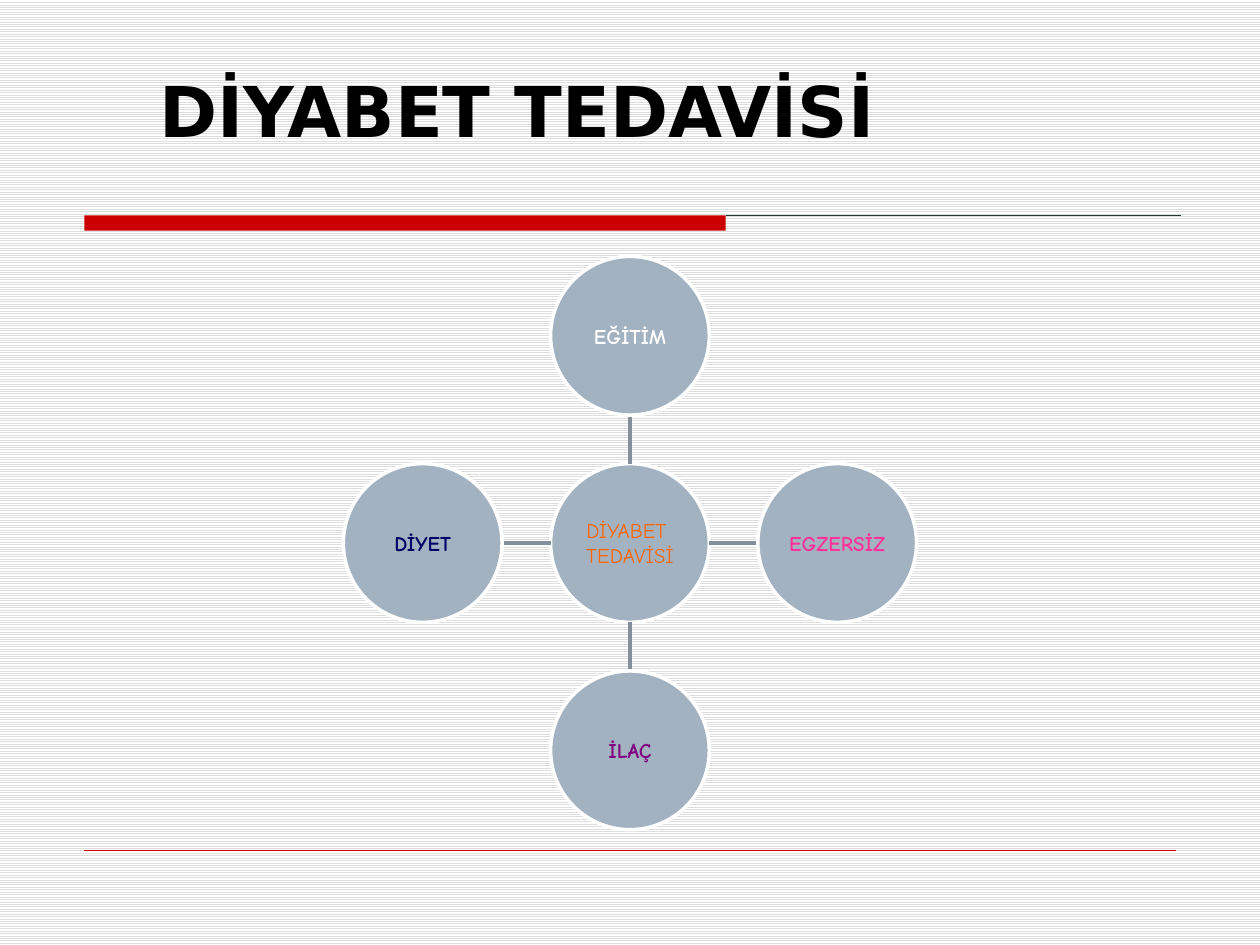
from lxml import etree
from pptx import Presentation
from pptx.dml.color import RGBColor
from pptx.enum.dml import MSO_PATTERN
from pptx.enum.shapes import MSO_CONNECTOR, MSO_SHAPE
from pptx.enum.text import MSO_ANCHOR, PP_ALIGN
from pptx.oxml.ns import qn
from pptx.util import Inches, Pt

STRAIGHT = MSO_CONNECTOR.STRAIGHT
OVAL, RECTANGLE = MSO_SHAPE.OVAL, MSO_SHAPE.RECTANGLE
MIDDLE, BOTTOM = MSO_ANCHOR.MIDDLE, MSO_ANCHOR.BOTTOM
CENTER, LEFT = PP_ALIGN.CENTER, PP_ALIGN.LEFT

BLACK = RGBColor(0x00, 0x00, 0x00)
WHITE = RGBColor(0xFF, 0xFF, 0xFF)
STRIPE = RGBColor(0xDD, 0xDD, 0xDD)
RED = RGBColor(0xCC, 0x00, 0x00)
DARK = RGBColor(0x26, 0x33, 0x33)
CIRCLE = RGBColor(0xA3, 0xB2, 0xC1)
SPOKE = RGBColor(0x83, 0x8F, 0x9B)
ORANGE = RGBColor(0xFF, 0x66, 0x00)
PINK = RGBColor(0xFF, 0x33, 0x99)
PURPLE = RGBColor(0x80, 0x00, 0x80)
NAVY = RGBColor(0x00, 0x00, 0x66)

# Content
TITLE = "DİYABET TEDAVİSİ"
HUB = ["DİYABET ", "TEDAVİSİ"]
TREATMENTS = [  # label, colour, direction from the hub (x, y)
    ("EĞİTİM", WHITE, (0, -1)),
    ("EGZERSİZ", PINK, (1, 0)),
    ("İLAÇ", PURPLE, (0, 1)),
    ("DİYET", NAVY, (-1, 0)),
]

# Geometry in inches
HUB_X, HUB_Y = 5, 4.31
DIAMETER, SPACING = 1.26, 1.645
RADIUS = DIAMETER / 2

TITLE_FORMAT = {"name": "DejaVu Sans", "size": Pt(40), "bold": True}
HUB_FORMAT = {"name": "Comic Neue", "size": Pt(12), "bold": False}
TREATMENT_FORMAT = {**HUB_FORMAT, "bold": True}


def write(frame, lines, text_format, color, align, anchor):
    frame.word_wrap = True
    frame.vertical_anchor = anchor
    for index, line in enumerate(lines):
        paragraph = frame.add_paragraph() if index else frame.paragraphs[0]
        paragraph.alignment = align
        run = paragraph.add_run()
        run.text = line
        for key, value in text_format.items():
            setattr(run.font, key, value)
        run.font.color.rgb = color


def add_line(slide, start, end, color, width):
    line = slide.shapes.add_connector(
        STRAIGHT, *(Inches(value) for value in (*start, *end)))
    line.line.color.rgb = color
    line.line.width = Pt(width)
    etree.SubElement(line._element.spPr, qn("a:effectLst"))


def add_circle(slide, x, y, lines, text_format, color):
    circle = slide.shapes.add_shape(
        OVAL, Inches(x - RADIUS), Inches(y - RADIUS),
        Inches(DIAMETER), Inches(DIAMETER))
    circle.shadow.inherit = False
    circle.fill.solid()
    circle.fill.fore_color.rgb = CIRCLE
    circle.line.color.rgb = WHITE
    circle.line.width = Pt(2)
    frame = circle.text_frame
    for side in ("left", "top", "right", "bottom"):
        setattr(frame, f"margin_{side}", Inches(0.01))
    write(frame, lines, text_format, color, CENTER, MIDDLE)


def main():
    prs = Presentation()
    prs.slide_width, prs.slide_height = Inches(10), Inches(7.5)
    slide = prs.slides.add_slide(prs.slide_layouts[6])

    # Striped background
    background = slide.background.fill
    background.patterned()
    background.pattern = MSO_PATTERN.LIGHT_HORIZONTAL
    background.fore_color.rgb = STRIPE
    background.back_color.rgb = WHITE

    # Title bar and rules
    bar = slide.shapes.add_shape(
        RECTANGLE, Inches(0.67), Inches(1.71), Inches(5.09), Inches(0.12))
    bar.shadow.inherit = False
    bar.fill.solid()
    bar.fill.fore_color.rgb = RED
    bar.line.fill.background()
    add_line(slide, (5.76, 1.71), (9.37, 1.71), DARK, 0.75)
    add_line(slide, (0.67, 6.75), (9.33, 6.75), RED, 0.25)

    # Title
    title = slide.shapes.add_textbox(
        Inches(1.17), Inches(0), Inches(7.42), Inches(1.25))
    write(title.text_frame, [TITLE], TITLE_FORMAT, BLACK, LEFT, BOTTOM)

    # Hub, spokes and treatments
    add_circle(slide, HUB_X, HUB_Y, HUB, HUB_FORMAT, ORANGE)
    for label, color, (dx, dy) in TREATMENTS:
        inner, outer = (
            (HUB_X + dx * reach, HUB_Y + dy * reach)
            for reach in (RADIUS, SPACING - RADIUS))
        add_line(slide, inner, outer, SPOKE, 2)
        add_circle(slide, HUB_X + dx * SPACING, HUB_Y + dy * SPACING,
                   [label], TREATMENT_FORMAT, color)

    prs.save("out.pptx")


if __name__ == "__main__":
    main()
